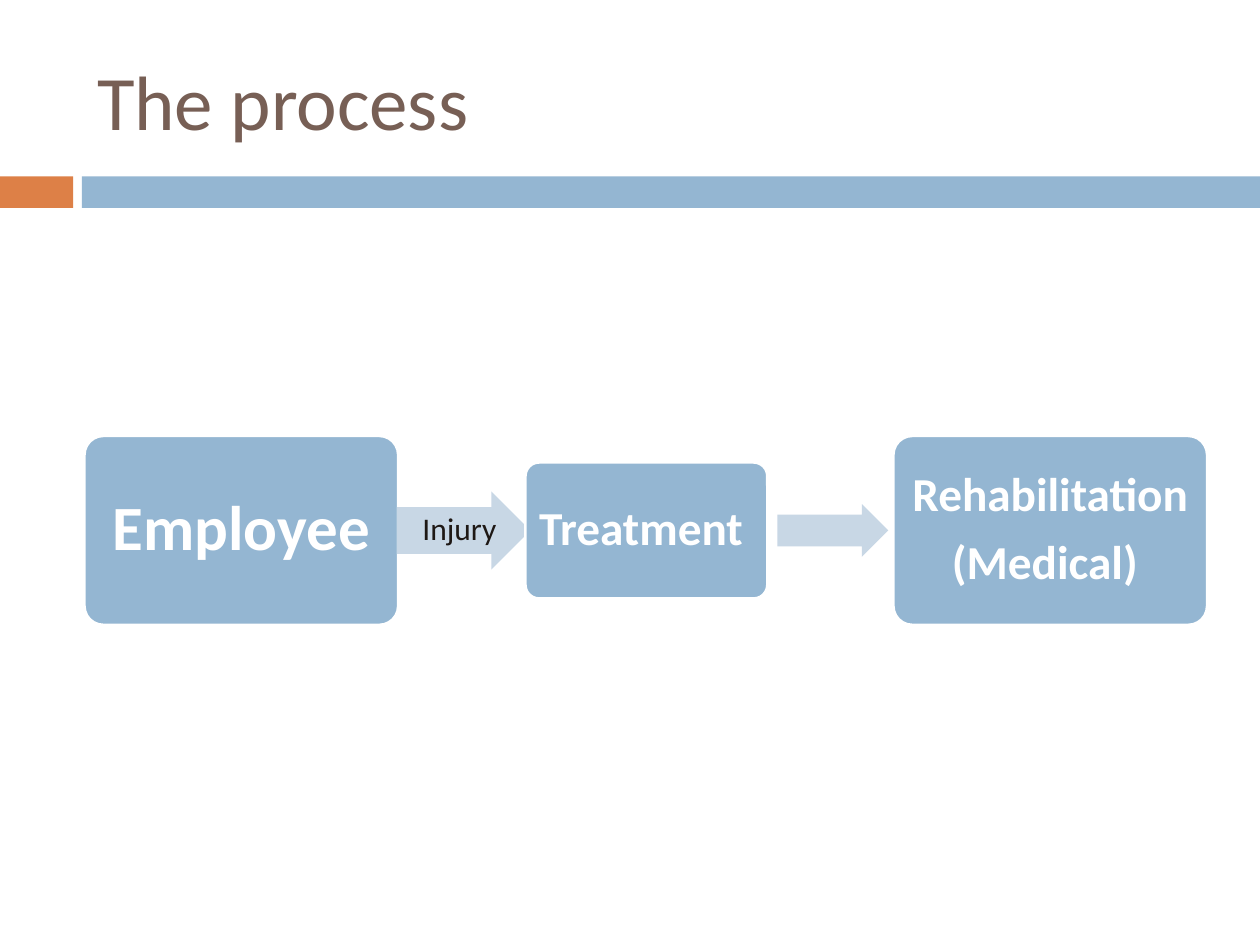
from pptx import Presentation
from pptx import util as u
from pptx.dml.color import RGBColor
from pptx.enum import shapes, text

FONT = "Calibri"
BLUE, ORANGE, PALE_BLUE = "94B6D2", "DD8047", "C8D7E5"
BROWN, DARK, WHITE = "775F55", "1E1815", "FFFFFF"
MIDDLE = 4.21  # height of the flow's centre line


def color(value):
    return RGBColor.from_string(value)


def style_runs(paragraph, size, font_color, bold=False):
    for run in paragraph.runs:
        run.font.name = FONT
        run.font.size = u.Pt(size)
        run.font.bold = bold
        run.font.color.rgb = color(font_color)


def add_block(slide, kind, left, top, width, height, fill):
    shape = slide.shapes.add_shape(
        kind, *(u.Inches(value) for value in (left, top, width, height)))
    shape.shadow.inherit = False
    shape.fill.solid()
    shape.fill.fore_color.rgb = color(fill)
    shape.line.fill.background()
    return shape


def add_label(shape, lines, size, font_color, bold=False, inset=0, left_inset=None):
    frame = shape.text_frame
    frame.word_wrap = True
    frame.vertical_anchor = text.MSO_ANCHOR.MIDDLE
    frame.margin_top = frame.margin_bottom = frame.margin_right = u.Inches(inset)
    frame.margin_left = u.Inches(inset if left_inset is None else left_inset)
    frame.text = lines
    for paragraph in frame.paragraphs:
        paragraph.alignment = text.PP_ALIGN.CENTER
        paragraph.line_spacing = 0.9
        paragraph.space_after = u.Pt(size * 0.35)
        style_runs(paragraph, size, font_color, bold)


def add_step(slide, left, width, height, lines, size):
    shape = add_block(slide, shapes.MSO_SHAPE.ROUNDED_RECTANGLE,
                      left, MIDDLE - height / 2, width, height, BLUE)
    shape.adjustments[0] = 0.1
    shape.line.color.rgb = color(WHITE)
    shape.line.width = u.Pt(1.5)
    add_label(shape, lines, size, WHITE, bold=True, inset=0.07)


def add_arrow(slide, left, width, height):
    shape = add_block(slide, shapes.MSO_SHAPE.RIGHT_ARROW,
                      left, MIDDLE - height / 2, width, height, PALE_BLUE)
    shape.adjustments[0] = 0.6
    shape.adjustments[1] = 0.5
    return shape


def add_title(slide, words):
    title = slide.shapes.title
    title.left, title.top = u.Inches(0.67), u.Inches(0.25)
    title.width, title.height = u.Inches(8.92), u.Inches(1.08)
    frame = title.text_frame
    frame.text = words
    frame.vertical_anchor = text.MSO_ANCHOR.MIDDLE
    frame.paragraphs[0].alignment = text.PP_ALIGN.LEFT
    style_runs(frame.paragraphs[0], 44, BROWN)


def main():
    presentation = Presentation()
    presentation.slide_width = u.Inches(10)
    presentation.slide_height = u.Inches(7.5)
    slide = presentation.slides.add_slide(presentation.slide_layouts[5])

    # Title and the band below it
    add_title(slide, "The process")
    add_block(slide, shapes.MSO_SHAPE.RECTANGLE, 0, 1.4, 0.58, 0.25, ORANGE)
    add_block(slide, shapes.MSO_SHAPE.RECTANGLE, 0.65, 1.4, 9.35, 0.25, BLUE)

    # Process flow, from left to right
    add_step(slide, 0.67, 2.49, 1.5, "Employee", 36)
    injury = add_arrow(slide, 3.15, 1.06, 0.62)
    add_label(injury, "Injury", 18, DARK, left_inset=0.12)
    add_step(slide, 4.17, 1.92, 1.08, "Treatment ", 27)
    add_arrow(slide, 6.17, 0.88, 0.42)
    add_step(slide, 7.09, 2.49, 1.5, "Rehabilitation\n(Medical) ", 27)

    presentation.save("out.pptx")


if __name__ == "__main__":
    main()
